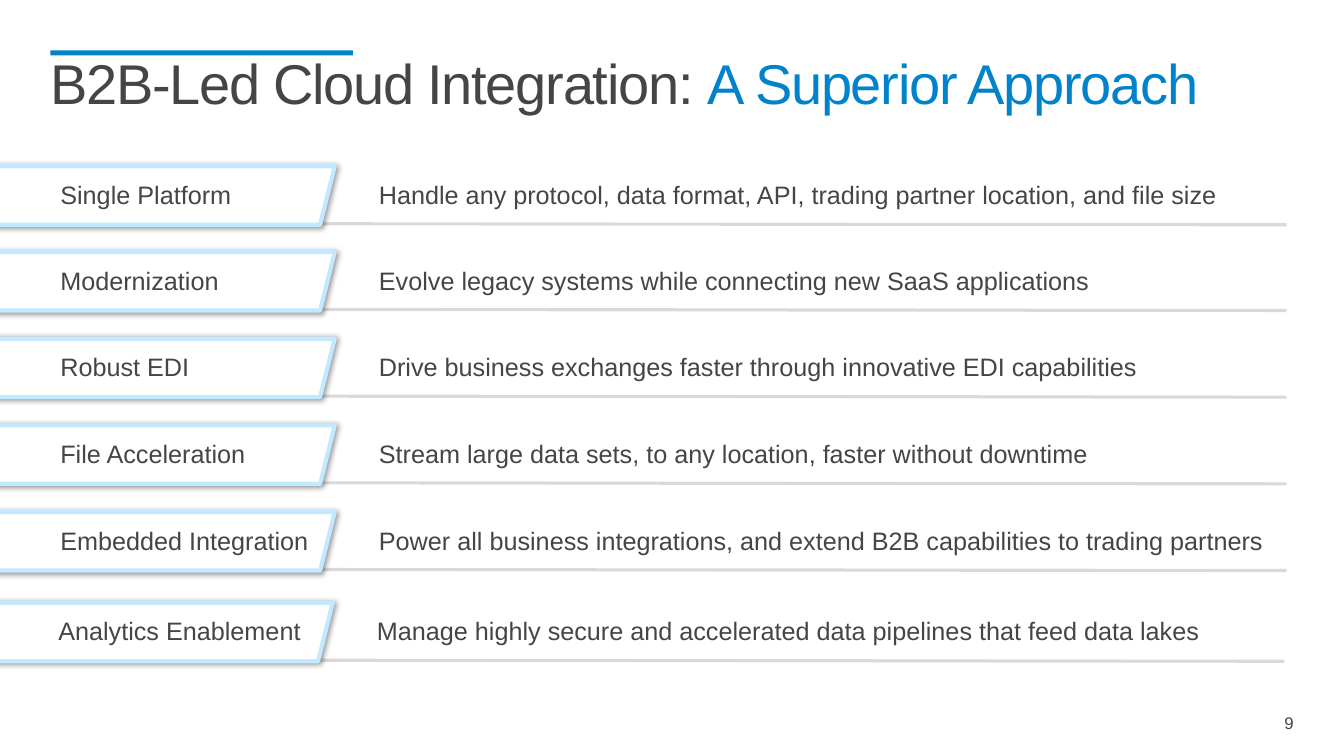
from dataclasses import dataclass

from lxml.etree import SubElement
from pptx import Presentation
from pptx.dml.color import RGBColor
from pptx.enum.shapes import MSO_CONNECTOR, MSO_SHAPE
from pptx.enum.text import MSO_ANCHOR as Anchor, MSO_AUTO_SIZE as AutoSize, PP_ALIGN as Align
from pptx.oxml.ns import qn
from pptx.shapes.autoshape import Shape
from pptx.slide import Slide
from pptx.util import Emu, Pt

EMU_PER_PX = 9144  # 100 px to the inch
FONT = "Arial"
INK = RGBColor(0x45, 0x45, 0x47)
BLUE = RGBColor(0x00, 0x83, 0xCA)
PALE_BLUE = RGBColor(0xC1, 0xE9, 0xFF)
GREY = RGBColor(0xD9, 0xD9, 0xD9)
WHITE = RGBColor(0xFF, 0xFF, 0xFF)


@dataclass(frozen=True)
class Benefit:
    label: str
    label_width: int
    detail: str
    detail_width: int
    top: int
    shift: int = 0


BENEFITS = [
    Benefit("Single Platform", 191,
            "Handle any protocol, data format, API, trading partner location, and file size", 859, 165),
    Benefit("Modernization", 179,
            "Evolve legacy systems while connecting new SaaS applications", 732, 250),
    Benefit("Robust EDI", 149,
            "Drive business exchanges faster through innovative EDI capabilities", 779, 336),
    Benefit("File Acceleration", 205,
            "Stream large data sets, to any location, faster without downtime", 723, 422),
    Benefit("Embedded Integration", 269,
            "Power all business integrations, and extend B2B capabilities to trading partners", 899, 508),
    Benefit("Analytics Enablement", 264,
            "Manage highly secure and accelerated data pipelines that feed data lakes", 837, 598, -2),
]


def px(count: int) -> Emu:
    return Emu(count * EMU_PER_PX)


def add_text(slide: Slide, runs: list[tuple[str, RGBColor]], left: int, top: int,
             width: int, height: int, *, size: int = 18, wrap: bool = False,
             inset: bool = True, align: Align = Align.LEFT, anchor: Anchor = Anchor.TOP,
             line_spacing: float = 1.0, tracking: int = 0) -> None:
    """Add one paragraph of coloured runs; tracking is in hundredths of a point."""
    frame = slide.shapes.add_textbox(px(left), px(top), px(width), px(height)).text_frame
    frame.word_wrap = wrap
    frame.auto_size = AutoSize.NONE if wrap else AutoSize.SHAPE_TO_FIT_TEXT
    frame.vertical_anchor = anchor
    if not inset:
        frame.margin_left = frame.margin_top = frame.margin_right = frame.margin_bottom = 0
    paragraph = frame.paragraphs[0]
    paragraph.alignment = align
    paragraph.line_spacing = line_spacing
    for words, color in runs:
        run = paragraph.add_run()
        run.text = words
        run.font.name = FONT
        run.font.size = Pt(size)
        run.font.color.rgb = color
        if tracking:
            run.font._element.set("spc", str(tracking))


def add_block(slide: Slide, preset: MSO_SHAPE, left: int, top: int,
              width: int, height: int, fill: RGBColor) -> Shape:
    block = slide.shapes.add_shape(preset, px(left), px(top), px(width), px(height))
    block.shadow.inherit = False
    block.fill.solid()
    block.fill.fore_color.rgb = fill
    block.line.fill.background()
    return block


def add_soft_shadow(shape: Shape) -> None:
    effects = shape._element.spPr.find(qn("a:effectLst"))
    shadow = SubElement(effects, qn("a:outerShdw"), blurRad=str(Pt(4)), dist=str(Pt(1)),
                        dir="2700000", algn="tl", rotWithShape="0")
    color = SubElement(shadow, qn("a:srgbClr"), val="000000")
    SubElement(color, qn("a:alpha"), val="40000")


def add_rule(slide: Slide, left: int, top: int, right: int, bottom: int) -> None:
    rule = slide.shapes.add_connector(MSO_CONNECTOR.STRAIGHT, px(left), px(top), px(right), px(bottom))
    rule.line.color.rgb = GREY
    rule.line.width = Pt(2.25)
    SubElement(rule._element.spPr, qn("a:effectLst"))


def add_benefit(slide: Slide, benefit: Benefit) -> None:
    top, shift = benefit.top, benefit.shift
    add_rule(slide, 299 + shift, top + 57, 1276 + shift, top + 58)
    tag = add_block(slide, MSO_SHAPE.PARALLELOGRAM, -30 + shift, top, 362, 58, WHITE)
    tag.line.color.rgb = PALE_BLUE
    tag.line.width = Pt(3)
    add_soft_shadow(tag)
    add_text(slide, [(benefit.label, INK)], 50 + shift, top + 8, benefit.label_width, 40)
    add_text(slide, [(benefit.detail, INK)], 366 + shift, top + 8, benefit.detail_width, 40)


def main() -> None:
    deck = Presentation()
    deck.slide_width, deck.slide_height = px(1333), px(750)
    slide = deck.slides.add_slide(deck.slide_layouts[6])

    add_block(slide, MSO_SHAPE.RECTANGLE, 50, 50, 300, 5, BLUE)
    add_text(slide, [("B2B-Led Cloud Integration: ", INK), ("A Superior Approach", BLUE)],
             50, 56, 1140, 130, size=40, wrap=True, inset=False, line_spacing=0.9, tracking=-90)
    for benefit in BENEFITS:
        add_benefit(slide, benefit)
    add_text(slide, [("9", INK)], 1181, 677, 102, 50, size=12, wrap=True, inset=False,
             align=Align.RIGHT, anchor=Anchor.BOTTOM)

    deck.save("out.pptx")


if __name__ == "__main__":
    main()
